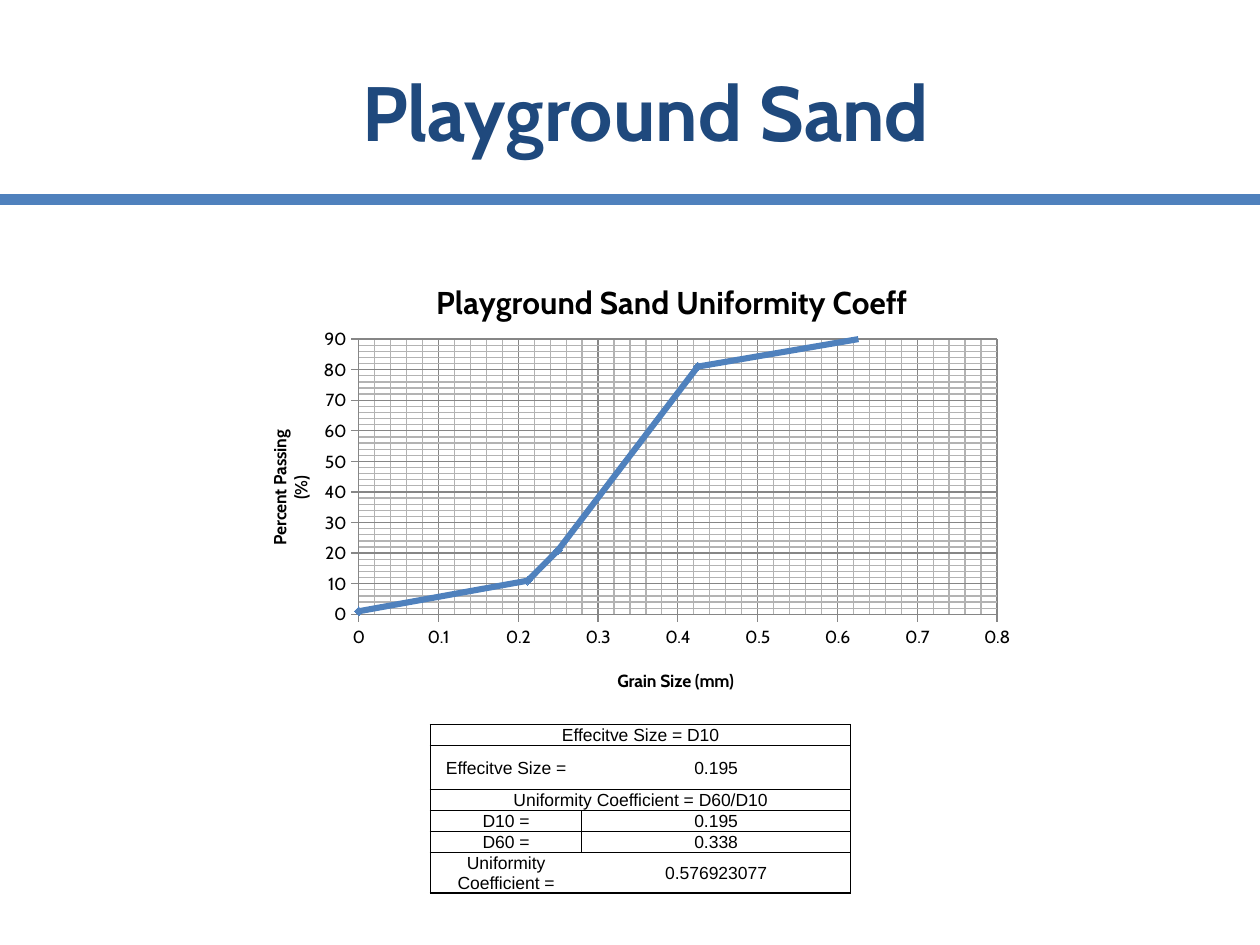
"""Build the Playground Sand slide: a grain-size chart above a table of coefficients."""
from dataclasses import dataclass
from lxml.etree import SubElement
from pptx import Presentation
from pptx.chart.data import XyChartData
from pptx.dml.color import RGBColor as Rgb
from pptx.enum.chart import XL_CHART_TYPE as Kind, XL_MARKER_STYLE as Mark, XL_TICK_MARK as Tick
from pptx.enum.shapes import MSO_CONNECTOR as Link
from pptx.enum.text import MSO_ANCHOR as Anchor, PP_ALIGN as Align
from pptx.oxml.ns import qn
from pptx.util import Inches, Pt


@dataclass
class Theme:
    navy: Rgb = Rgb(0x1F, 0x49, 0x7D)
    blue: Rgb = Rgb(0x4F, 0x81, 0xBD)
    black: Rgb = Rgb(0, 0, 0)
    major: Rgb = Rgb(0x86, 0x86, 0x86)
    minor: Rgb = Rgb(0xB3, 0xB3, 0xB3)
    face: str = "Cabin"
    plain: str = "Arial"
    big: int = 44
    head: int = 18
    small: int = 10


def style(frame, face, size, color, bold):
    for par in frame.paragraphs:
        par.alignment = Align.CENTER
        for run in par.runs:
            font = run.font
            font.name, font.size, font.bold = face, Pt(size), bold
            font.color.rgb = color


def place(node, **spots):
    for old in node.findall(qn("c:layout")):
        node.remove(old)
    box = SubElement(node, qn("c:layout"))
    text = node.find(qn("c:tx"))
    node.insert(0 if text is None else node.index(text) + 1, box)
    man = SubElement(box, qn("c:manualLayout"))
    if "w" in spots:
        SubElement(man, qn("c:layoutTarget")).set("val", "inner")
    for mode in ("xMode", "yMode"):
        SubElement(man, qn("c:" + mode)).set("val", "edge")
    for key, val in spots.items():
        SubElement(man, qn("c:" + key)).set("val", str(val))


theme = Theme()
deck = Presentation()
deck.slide_width, deck.slide_height = Inches(10), Inches(7.5)
unit = deck.slide_width / 120
slide = deck.slides.add_slide(deck.slide_layouts[5])
shapes = slide.shapes

title = shapes.title
title.left, title.top, title.width, title.height = [int(n * unit) for n in (6, 3, 111, 15)]
title.text_frame.text = "Playground Sand"
title.text_frame.vertical_anchor = Anchor.MIDDLE
style(title.text_frame, theme.face, theme.big, theme.navy, True)

level = int(19 * unit)
rule = shapes.add_connector(Link.STRAIGHT, 0, level, deck.slide_width, level)
rule.line.color.rgb, rule.line.width = theme.blue, Pt(6)
SubElement(rule._element.spPr, qn("a:effectLst"))

data = XyChartData()
sand = data.add_series("Series 1")
sizes = (4.75, 2, 0.85, 0.425, 0.25, 0.212, 0)
for size, share in zip(sizes, (100, 100, 100, 81, 21, 11, 1)):
    sand.add_data_point(size, share)
spot = [int(n * unit) for n in (22, 24, 76, 43.7)]
chart = shapes.add_chart(Kind.XY_SCATTER_SMOOTH, *spot, data).chart
chart.has_legend = False
chart.font.name, chart.font.size = theme.face, Pt(theme.small)
chart.font.color.rgb = theme.black
chart.has_title = True
chart.chart_title.text_frame.text = "Playground Sand Uniformity Coeff"
style(chart.chart_title.text_frame, theme.face, theme.head, theme.black, True)
place(chart.chart_title._element, x=0.25, y=0.05)
place(chart._chartSpace.chart.plotArea, x=0.16, y=0.19, w=0.8, h=0.6)

axes = (
    (chart.category_axis, "Grain Size (mm)", 0.8, 0.1, 0.48, 0.9),
    (chart.value_axis, "Percent Passing\n(%)", 90, 10, 0.04, 0.38),
)
for axis, name, top, step, left, drop in axes:
    axis.minimum_scale, axis.maximum_scale = 0, top
    axis.major_unit, axis.minor_unit = step, step / 5
    axis.major_tick_mark, axis.minor_tick_mark = Tick.OUTSIDE, Tick.NONE
    axis.has_major_gridlines = axis.has_minor_gridlines = True
    axis.tick_labels.number_format = "General"
    axis.tick_labels.number_format_is_linked = False
    lines = (
        (axis.format.line, theme.major),
        (axis.major_gridlines.format.line, theme.major),
        (axis.minor_gridlines.format.line, theme.minor),
    ) if hasattr(axis, "minor_gridlines") else (
        (axis.format.line, theme.major),
        (axis.major_gridlines.format.line, theme.major),
    )
    for line, color in lines:
        line.color.rgb, line.width = color, Pt(0.75)
    grid = axis._element.find(qn("c:minorGridlines"))
    pen = SubElement(SubElement(grid, qn("c:spPr")), qn("a:ln"), w=str(Pt(0.75)))
    SubElement(SubElement(pen, qn("a:solidFill")), qn("a:srgbClr"), val=str(theme.minor))
    axis.axis_title.text_frame.text = name
    style(axis.axis_title.text_frame, theme.face, theme.small, theme.black, True)
    place(axis.axis_title._element, x=left, y=drop)
chart.value_axis.axis_title.text_frame._txBody.bodyPr.set("rot", "-5400000")
chart.value_axis.axis_title.text_frame._txBody.bodyPr.set("vert", "horz")

curve = chart.plots[0].series[0]
curve.smooth = True
curve.format.line.color.rgb, curve.format.line.width = theme.blue, Pt(3.5)
curve.marker.style, curve.marker.size = Mark.DIAMOND, 5
curve.marker.format.fill.solid()
curve.marker.format.fill.fore_color.rgb = theme.blue
curve.marker.format.line.color.rgb = theme.blue

rows = (
    ("Effecitve Size = D10", None, 2),
    ("Effecitve Size =", "0.195", 4.2),
    ("Uniformity Coefficient = D60/D10", None, 2),
    ("D10 =", "0.195", 2),
    ("D60 =", "0.338", 2),
    ("Uniformity Coefficient =", "0.576923077", 2.9),
)
spot = [int(n * unit) for n in (41, 69, 40, 15.1)]
table = shapes.add_table(len(rows), 2, *spot).table
table.first_row = table.horz_banding = False
for col, wide in zip(table.columns, (14.4, 25.6)):
    col.width = int(wide * unit)
for r, (label, value, tall) in enumerate(rows):
    table.rows[r].height = int(tall * unit)
    if value is None:
        table.cell(r, 0).merge(table.cell(r, 1))
    inner = 0.5 if r in (3, 4) else 0
    above = 1 if r in (0, 2) else 0.5
    below = 1 if r in (1, 5) else 0.5
    for c, text in enumerate((label, value)):
        cell = table.cell(r, c)
        cell.margin_left = cell.margin_right = cell.margin_top = Inches(0.01)
        cell.margin_bottom = 0
        cell.vertical_anchor = Anchor.MIDDLE
        cell.text_frame.text = text or ""
        style(cell.text_frame, theme.plain, theme.small, theme.black, False)
        right = inner if c == 0 and value else 1
        edges = {"L": inner if c else 1, "R": right, "T": above, "B": below}
        for side, width in edges.items():
            pen = SubElement(cell._tc.get_or_add_tcPr(), qn("a:ln" + side), w=str(Pt(width)))
            if width:
                fill = SubElement(pen, qn("a:solidFill"))
                SubElement(fill, qn("a:srgbClr"), val=str(theme.black))
            else:
                SubElement(pen, qn("a:noFill"))
        cell.fill.background()

deck.save("out.pptx")
